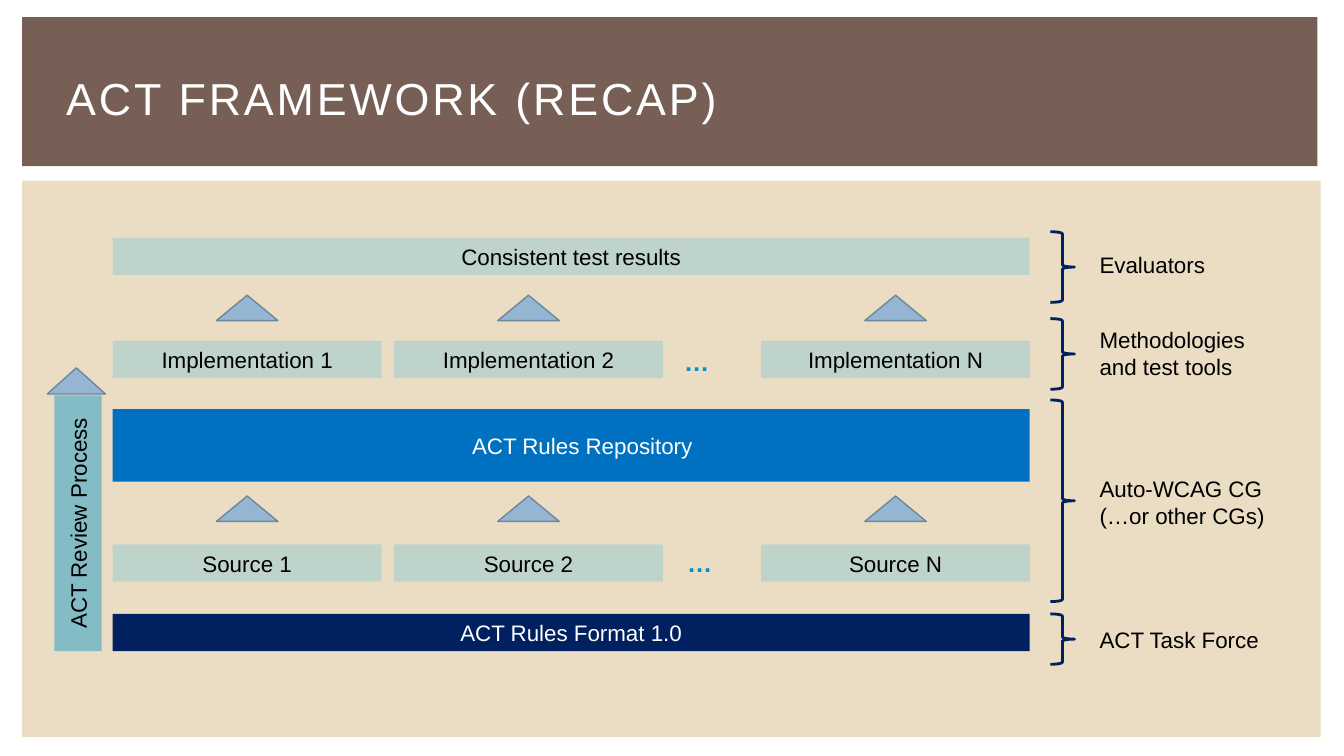
from dataclasses import dataclass
from typing import Optional

import pptx
import pptx.dml.color
import pptx.enum.shapes
import pptx.enum.text
import pptx.oxml
import pptx.oxml.ns
import pptx.shapes.autoshape
import pptx.util

Cm = pptx.util.Cm
Pt = pptx.util.Pt
RGBColor = pptx.dml.color.RGBColor
Shape = pptx.shapes.autoshape.Shape
MSO_SHAPE = pptx.enum.shapes.MSO_SHAPE
PP_ALIGN = pptx.enum.text.PP_ALIGN
MSO_ANCHOR = pptx.enum.text.MSO_ANCHOR

WHITE = RGBColor(0xFF, 0xFF, 0xFF)
BLACK = RGBColor(0x00, 0x00, 0x00)
BROWN = RGBColor(0x77, 0x5F, 0x55)
SAND = RGBColor(0xEB, 0xDD, 0xC3)
NAVY = RGBColor(0x00, 0x20, 0x60)
BLUE = RGBColor(0x00, 0x70, 0xC0)
SKY = RGBColor(0x00, 0xB0, 0xF0)
TEAL = RGBColor(0x00, 0x93, 0xC9)
ARROW_FILL = RGBColor(0x94, 0xB6, 0xD2)
ARROW_EDGE = RGBColor(0x6D, 0x87, 0x9B)

# Shared measures in centimetres
STACK_LEFT, STACK_WIDTH = 2.84, 23.11
BOX_WIDTH, BAR_HEIGHT = 6.78, 0.94
COLUMNS = (2.84, 9.93, 19.18)
ARROW_WIDTH, ARROW_HEIGHT = 1.55, 0.64


@dataclass(frozen=True)
class Box:
    left: float
    top: float
    width: float
    height: float

    def lengths(self) -> tuple:
        return Cm(self.left), Cm(self.top), Cm(self.width), Cm(self.height)


@dataclass(frozen=True)
class Bar:
    text: str
    box: Box
    fill: RGBColor = SKY
    alpha: Optional[int] = 19
    color: RGBColor = BLACK


@dataclass(frozen=True)
class Owner:
    text: str
    brace_top: float
    brace_height: float
    label_top: float
    label_height: float


deck = pptx.Presentation()
deck.slide_width, deck.slide_height = Cm(33.87), Cm(19.05)
slide = deck.slides.add_slide(deck.slide_layouts[6])


def add_figure(kind: MSO_SHAPE, box: Box, fill: Optional[RGBColor] = None,
               alpha: Optional[int] = None, edge: Optional[RGBColor] = None,
               edge_width: float = 1) -> Shape:
    figure = slide.shapes.add_shape(kind, *box.lengths())
    figure.shadow.inherit = False
    if fill is None:
        figure.fill.background()
    else:
        figure.fill.solid()
        figure.fill.fore_color.rgb = fill
    if alpha is not None:
        color = figure._element.spPr.find(".//" + pptx.oxml.ns.qn("a:srgbClr"))
        color.append(pptx.oxml.parse_xml(
            f'<a:alpha {pptx.oxml.ns.nsdecls("a")} val="{alpha * 1000}"/>'))
    if edge is None:
        figure.line.fill.background()
    else:
        figure.line.color.rgb = edge
        figure.line.width = Pt(edge_width)
    return figure


def write(holder: Shape, text: str, color: RGBColor, size: float = 16,
          align: PP_ALIGN = PP_ALIGN.LEFT, anchor: MSO_ANCHOR = MSO_ANCHOR.TOP,
          bold: bool = False, spacing: float = 0) -> None:
    frame = holder.text_frame
    frame.word_wrap = True
    frame.vertical_anchor = anchor
    paragraph = frame.paragraphs[0]
    paragraph.alignment = align
    run = paragraph.add_run()
    run.text = text
    run.font.name, run.font.size, run.font.bold = "Arial", Pt(size), bold
    run.font.color.rgb = color
    if spacing:
        run.font._element.set("spc", str(round(spacing * 100)))


def add_label(text: str, box: Box, color: RGBColor, **style) -> None:
    write(slide.shapes.add_textbox(*box.lengths()), text, color, **style)


def add_bar(bar: Bar) -> Shape:
    figure = add_figure(MSO_SHAPE.RECTANGLE, bar.box, bar.fill, bar.alpha)
    write(figure, bar.text, bar.color, align=PP_ALIGN.CENTER, anchor=MSO_ANCHOR.MIDDLE)
    return figure


def add_arrowhead(box: Box) -> None:
    add_figure(MSO_SHAPE.ISOSCELES_TRIANGLE, box, ARROW_FILL, edge=ARROW_EDGE)


# Header band, body panel and title
add_figure(MSO_SHAPE.RECTANGLE, Box(0.56, 0.43, 32.64, 3.76), BROWN)
add_figure(MSO_SHAPE.RECTANGLE, Box(0.56, 4.55, 32.72, 14.02), SAND)
add_label("ACT FRAMEWORK (RECAP)", Box(1.42, 0.99, 31.04, 2.92), WHITE,
          size=32, anchor=MSO_ANCHOR.MIDDLE, spacing=2)

# Full-width layers
add_bar(Bar("ACT Rules Format 1.0", Box(STACK_LEFT, 15.47, STACK_WIDTH, BAR_HEIGHT),
            NAVY, None, WHITE))
repository = add_bar(Bar("ACT Rules Repository", Box(STACK_LEFT, 10.31, STACK_WIDTH, 1.83),
                         BLUE, None, WHITE))
repository.text_frame.margin_left = Cm(0.56)
repository.text_frame.margin_right = 0
add_bar(Bar("Consistent test results", Box(STACK_LEFT, 5.99, STACK_WIDTH, BAR_HEIGHT)))

# Rows of boxes, each with arrowheads above
for row_name, row_top, arrow_top in (("Implementation", 8.59, 7.44), ("Source", 13.72, 12.5)):
    for column_left, number in zip(COLUMNS, "12N"):
        add_bar(Bar(f"{row_name} {number}", Box(column_left, row_top, BOX_WIDTH, BAR_HEIGHT)))
        add_arrowhead(Box(column_left + (BOX_WIDTH - ARROW_WIDTH) / 2, arrow_top,
                          ARROW_WIDTH, ARROW_HEIGHT))

for dots_left, dots_top in ((16.99, 8.59), (17.07, 13.67)):
    add_label("…", Box(dots_left, dots_top, 1.83, 1.02), TEAL, size=18, bold=True)

# Braces with the owner of each layer
OWNERS = (
    Owner("Evaluators", 5.84, 1.78, 6.2, 0.94),
    Owner("Methodologies and test tools", 8.03, 1.78, 8.1, 1.63),
    Owner("Auto-WCAG CG (…or other CGs)", 10.08, 5.08, 11.86, 1.63),
    Owner("ACT Task Force", 15.47, 1.27, 15.65, 0.94),
)
for owner in OWNERS:
    add_figure(MSO_SHAPE.RIGHT_BRACE, Box(26.47, owner.brace_top, 0.61, owner.brace_height),
               edge=NAVY, edge_width=2)
    add_label(owner.text, Box(27.46, owner.label_top, 5.18, owner.label_height), BLACK)

# Review process arrow, read from bottom to top
review = add_bar(Bar("ACT Review Process", Box(1.37, 9.96, 1.19, 6.45), TEAL, 44))
review.rotation = 180
review.text_frame.margin_top = review.text_frame.margin_bottom = 0
review.text_frame._txBody.bodyPr.set("vert", "vert")
add_arrowhead(Box(1.19, 9.27, 1.47, 0.66))

deck.save("out.pptx")
